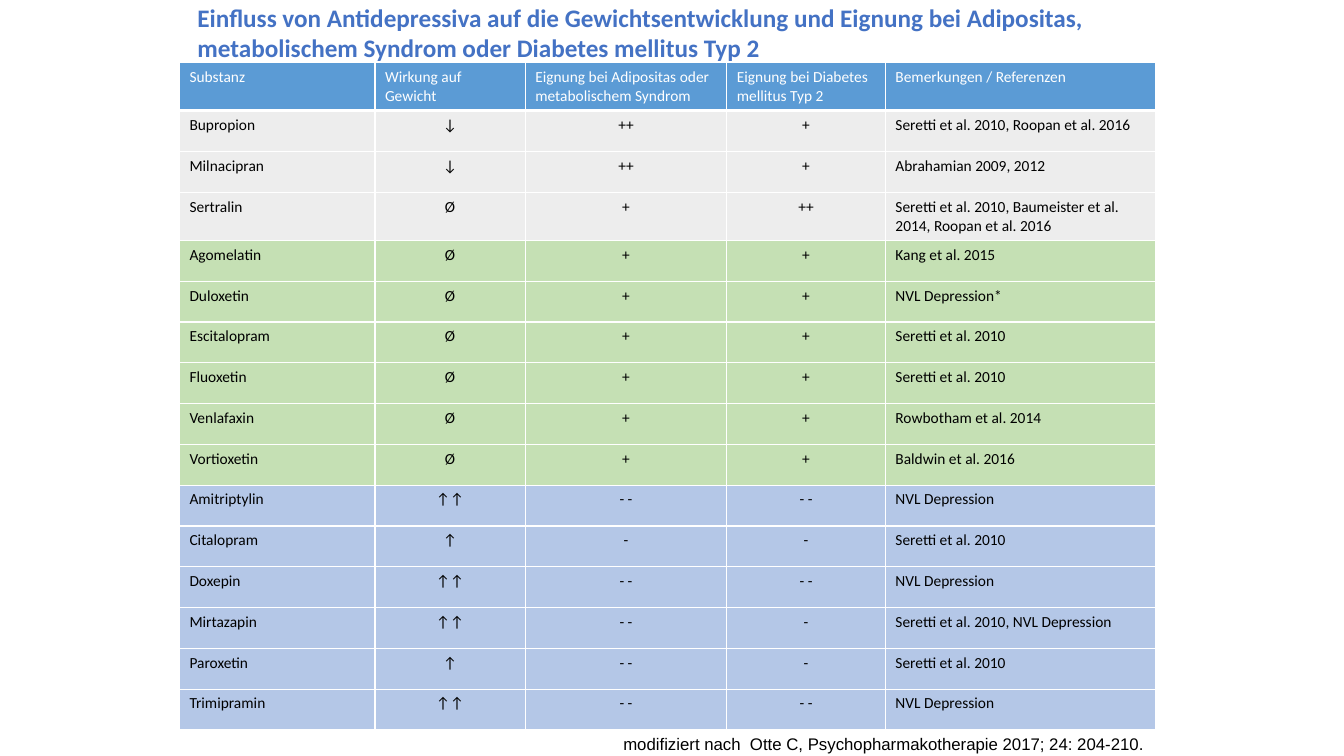
from lxml.etree import SubElement
from pptx import Presentation
from pptx.dml.color import RGBColor
from pptx.enum.text import PP_ALIGN as Align
from pptx.oxml.ns import qn
from pptx.util import Inches, Pt

WIDTH, HEIGHT = 13.33, 7.5
TABLE_LEFT, TABLE_TOP = 13.35, 8.27
COLUMN_SHARES = [14.55, 11.18, 15, 11.8, 20.1]
ROW_SHARE = 5.4
CENTRED_COLUMNS = (1, 2, 3)
WHITE, BLACK = "FFFFFF", "000000"
HEADER_FILL, TITLE_COLOUR = "5B9BD5", "4472C4"
TITLE = ("Einfluss von Antidepressiva auf die Gewichtsentwicklung und Eignung bei "
         "Adipositas, metabolischem Syndrom oder Diabetes mellitus Typ 2")
CITATION = "modifiziert nach  Otte C, Psychopharmakotherapie 2017; 24: 204-210."
HEADINGS = ["Substanz", "Wirkung auf Gewicht",
            "Eignung bei Adipositas oder metabolischem Syndrom",
            "Eignung bei Diabetes mellitus Typ 2", "Bemerkungen / Referenzen"]
GROUPS = {
    "EDEDED": [
        ("Bupropion", "↓", "++", "+", "Seretti et al. 2010, Roopan et al. 2016"),
        ("Milnacipran", "↓", "++", "+", "Abrahamian 2009, 2012"),
        ("Sertralin", "Ø", "+", "++",
         "Seretti et al. 2010, Baumeister et al. 2014, Roopan et al. 2016"),
    ],
    "C5E0B4": [
        (substance, "Ø", "+", "+", reference) for substance, reference in (
            ("Agomelatin", "Kang et al. 2015"),
            ("Duloxetin", "NVL Depression*"),
            ("Escitalopram", "Seretti et al. 2010"),
            ("Fluoxetin", "Seretti et al. 2010"),
            ("Venlafaxin", "Rowbotham et al. 2014"),
            ("Vortioxetin", "Baldwin et al. 2016"))
    ],
    "B4C7E7": [
        ("Amitriptylin", "↑↑", "- -", "- -", "NVL Depression"),
        ("Citalopram", "↑", "-", "-", "Seretti et al. 2010"),
        ("Doxepin", "↑↑", "- -", "- -", "NVL Depression"),
        ("Mirtazapin", "↑↑", "- -", "-", "Seretti et al. 2010, NVL Depression"),
        ("Paroxetin", "↑", "- -", "-", "Seretti et al. 2010"),
        ("Trimipramin", "↑↑", "- -", "- -", "NVL Depression"),
    ],
}


def colour(hex_code):
    """Turn a hex string into a colour."""
    return RGBColor.from_string(hex_code)


def across(percent):
    """Return a share of the slide's width."""
    return Inches(WIDTH * percent / 100)


def down(percent):
    """Return a share of the slide's height."""
    return Inches(HEIGHT * percent / 100)


def write(frame, text, size, hex_code, font="Calibri", bold=False, align=Align.LEFT):
    """Write one formatted run into the first paragraph of a text frame."""
    para = frame.paragraphs[0]
    para.alignment = align
    span = para.add_run()
    span.text = text
    span.font.name = font
    span.font.size = Pt(size)
    span.font.bold = bold
    span.font.color.rgb = colour(hex_code)


def add_text(page, left, top, width, height, text, size, hex_code, **style):
    """Add a wrapping text box placed by shares of the slide."""
    box = page.shapes.add_textbox(across(left), down(top), across(width), down(height))
    box.text_frame.word_wrap = True
    write(box.text_frame, text, size, hex_code, **style)
    return box


def set_borders(cell, bottom):
    """Give a cell white borders, with its own weight at the bottom."""
    properties = cell._tc.get_or_add_tcPr()
    for side, weight in (("L", 1), ("R", 1), ("T", 1), ("B", bottom)):
        line = SubElement(properties, qn(f"a:ln{side}"), w=str(Pt(weight)))
        fill = SubElement(line, qn("a:solidFill"))
        SubElement(fill, qn("a:srgbClr"), val=WHITE)


def fill_row(table, index, texts, fill, ink, centred=(), bottom=1):
    """Fill and format one table row."""
    table.rows[index].height = down(ROW_SHARE)
    for column, text in enumerate(texts):
        cell = table.cell(index, column)
        set_borders(cell, bottom)
        cell.fill.solid()
        cell.fill.fore_color.rgb = colour(fill)
        align = Align.CENTER if column in centred else Align.LEFT
        write(cell.text_frame, text, 11, ink, align=align)


def add_drug_table(page):
    """Add the table of substances, coloured by group."""
    rows = [(fill, texts) for fill, group in GROUPS.items() for texts in group]
    count = len(rows) + 1
    table = page.shapes.add_table(
        count, len(HEADINGS), across(TABLE_LEFT), down(TABLE_TOP),
        across(sum(COLUMN_SHARES)), down(ROW_SHARE * count)).table
    table.horz_banding = False
    for column, share in zip(table.columns, COLUMN_SHARES):
        column.width = across(share)
    fill_row(table, 0, HEADINGS, HEADER_FILL, WHITE, bottom=3)
    for index, (fill, texts) in enumerate(rows, start=1):
        fill_row(table, index, texts, fill, BLACK, CENTRED_COLUMNS)


def main():
    """Build and save the slide."""
    deck = Presentation()
    deck.slide_width, deck.slide_height = Inches(WIDTH), Inches(HEIGHT)
    page = deck.slides.add_slide(deck.slide_layouts[6])
    add_drug_table(page)
    add_text(page, 13.95, -0.4, 71.5, 9.47, TITLE, 18, TITLE_COLOUR, bold=True)
    citation = add_text(page, 35.86, 96.4, 50.79, 4.04, CITATION, 12, BLACK,
                        font="Arial", align=Align.RIGHT)
    citation.text_frame.margin_right = Inches(0.2)
    deck.save("out.pptx")


if __name__ == "__main__":
    main()
